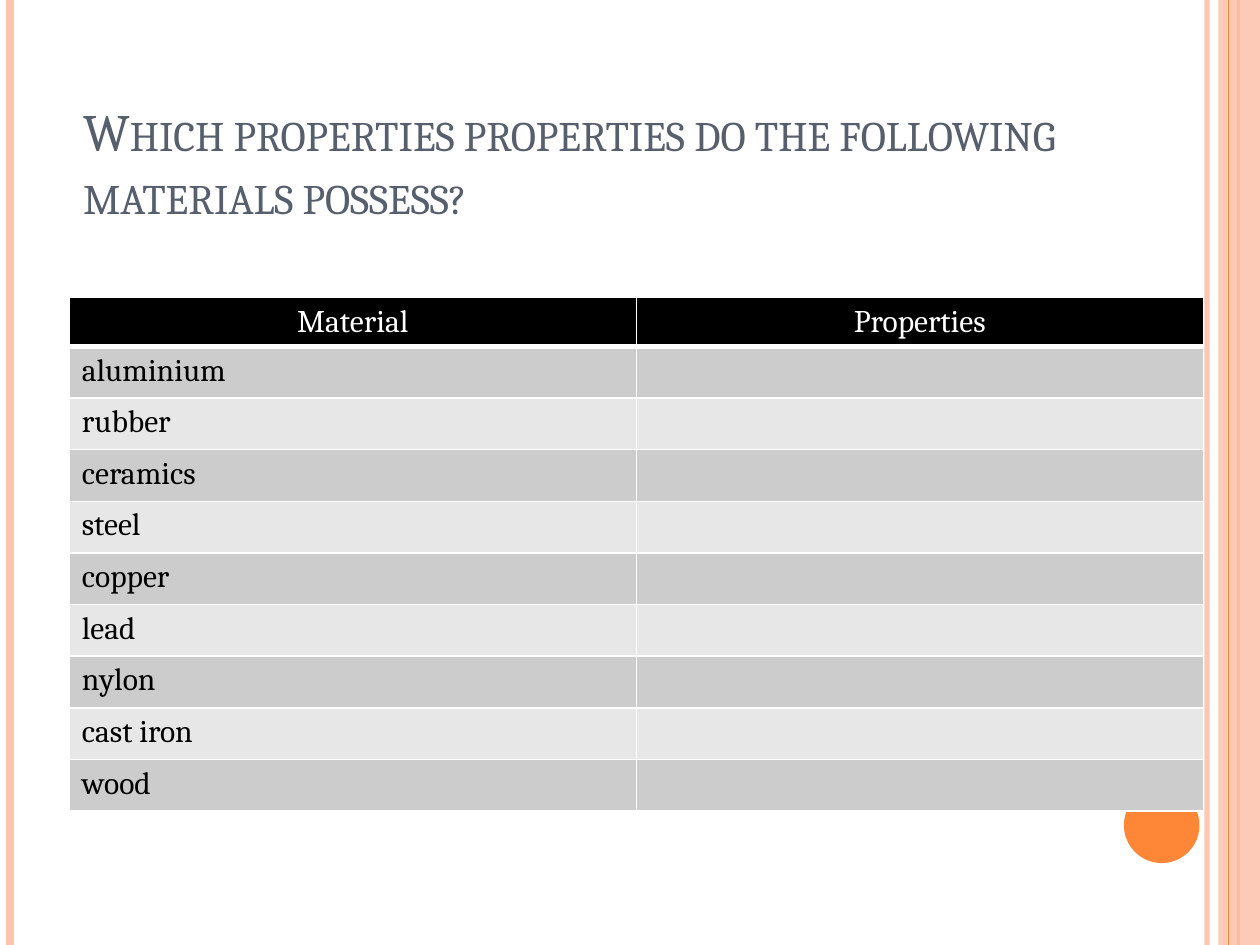
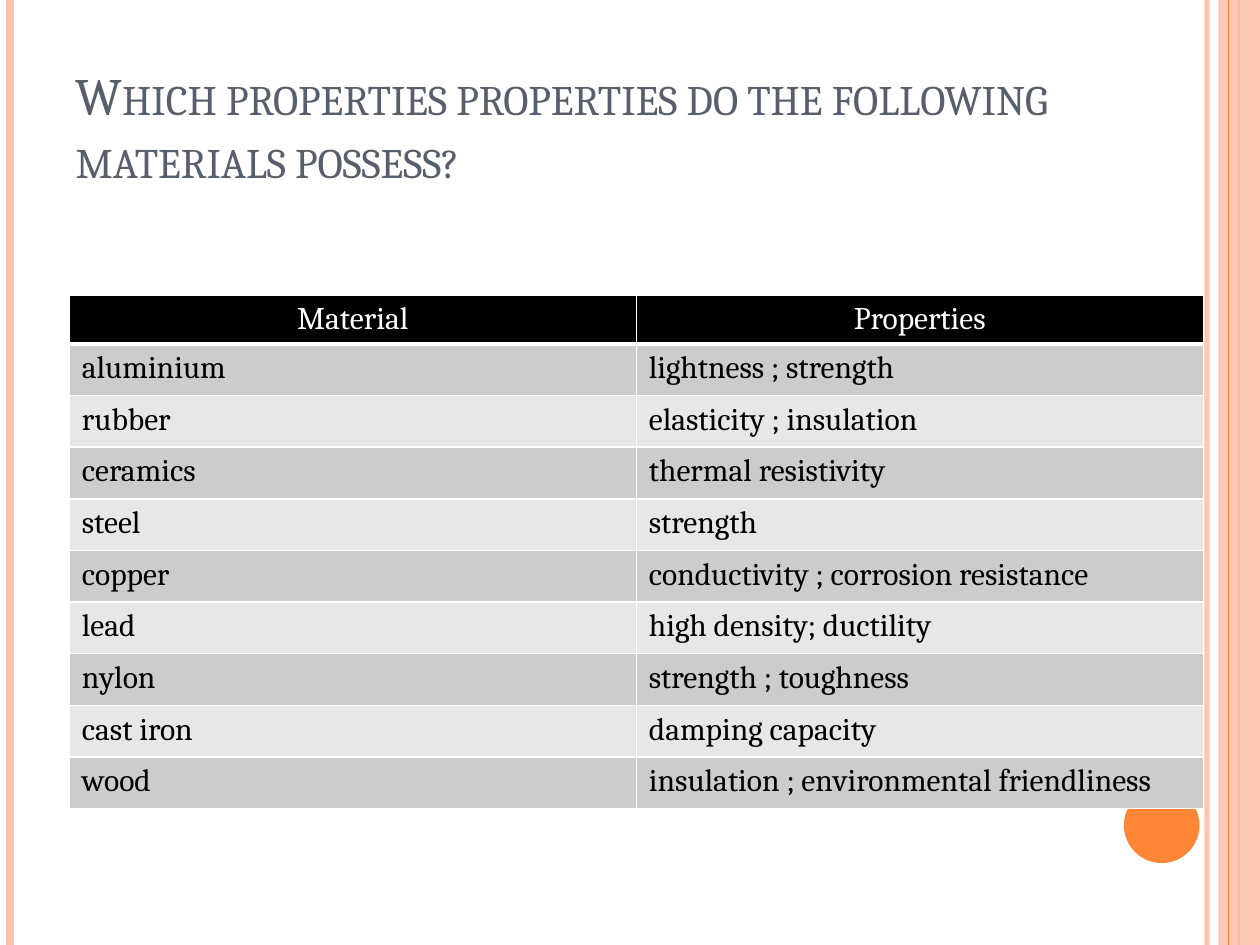
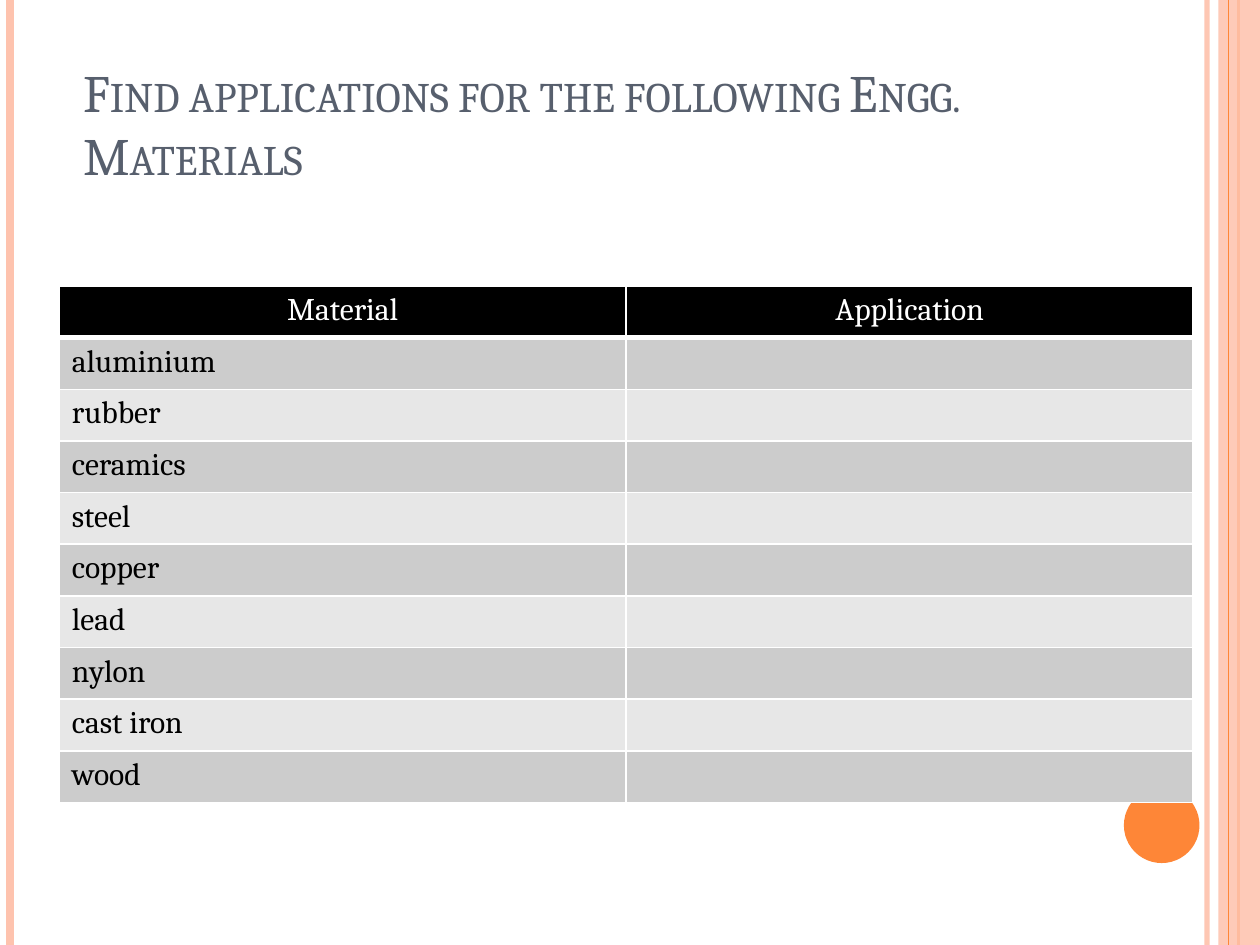
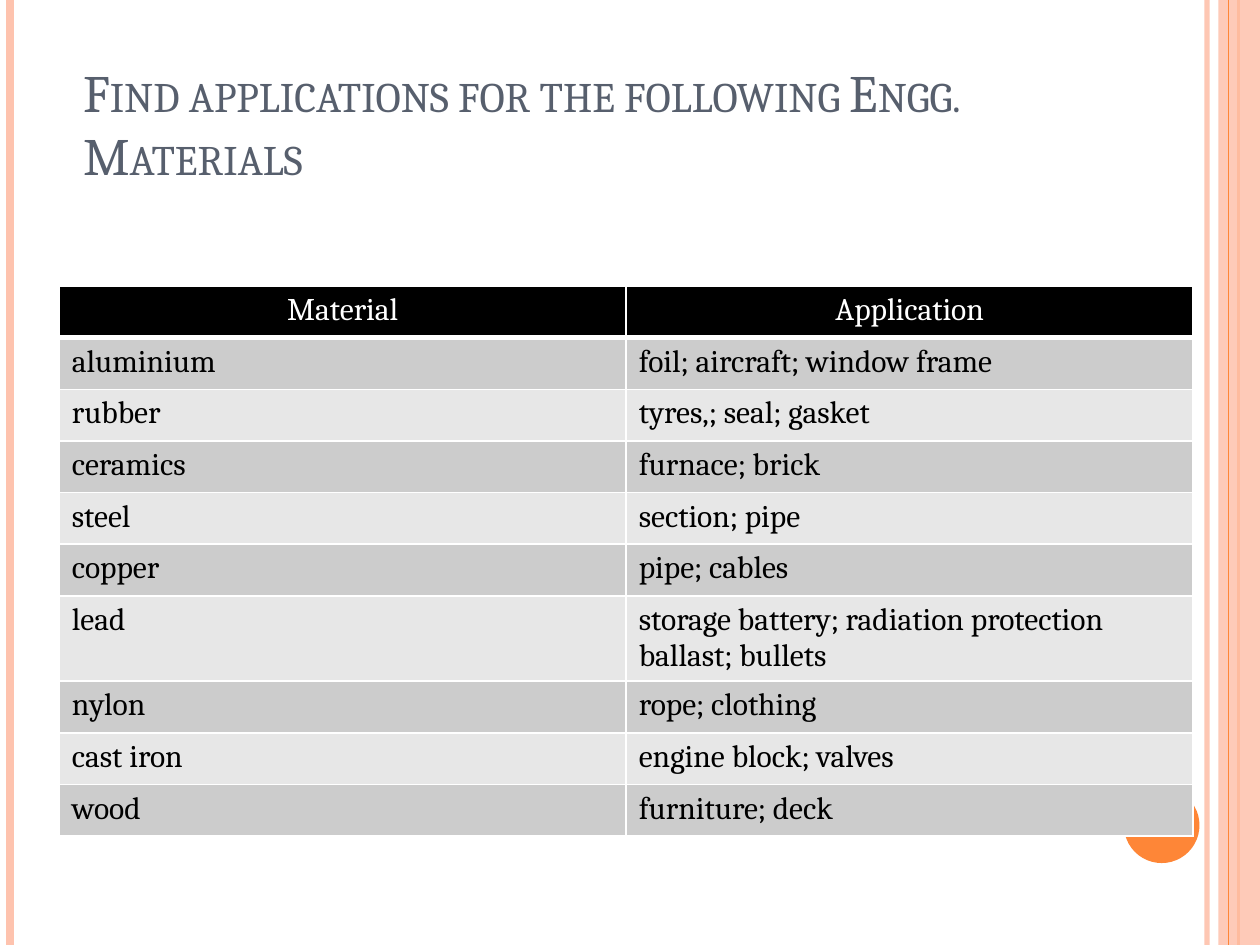
import pptx
import pptx.util
import pptx.dml.color
import pptx.enum.shapes
import pptx.enum.text
import pptx.oxml
import pptx.oxml.ns
import lxml.etree

Inches = pptx.util.Inches
Pt = pptx.util.Pt
RGBColor = pptx.dml.color.RGBColor
qn = pptx.oxml.ns.qn

PEACH = RGBColor(0xFE, 0xC3, 0xAE)
ORANGE = RGBColor(0xFE, 0x86, 0x37)
SLATE = RGBColor(0x57, 0x5F, 0x6D)
BLACK = RGBColor(0, 0, 0)
WHITE = RGBColor(0xFF, 0xFF, 0xFF)
DARK_BAND = RGBColor(0xCC, 0xCC, 0xCC)
LIGHT_BAND = RGBColor(0xE7, 0xE7, 0xE7)
FONT = "Cambria"

MATERIALS = ["aluminium", "rubber", "ceramics", "steel", "copper",
             "lead", "nylon", "cast iron", "wood"]
PROPERTIES = ["lightness ; strength", "elasticity ; insulation",
              "thermal resistivity", "strength",
              "conductivity ; corrosion resistance",
              "high density; ductility", "strength ; toughness",
              "damping capacity", "insulation ; environmental friendliness"]
APPLICATIONS = ["foil; aircraft; window frame", "tyres,; seal; gasket",
                "furnace; brick", "section; pipe", "pipe; cables",
                "storage battery; radiation protection ballast; bullets",
                "rope; clothing", "engine block; valves", "furniture; deck"]
UNANSWERED = [""] * len(MATERIALS)
PROPERTY_QUESTION = "Which properties properties do the following materials possess?"
APPLICATION_QUESTION = "Find applications for the following Engg. Materials"

PAGES = [
    (PROPERTY_QUESTION, (0.5, 0.28, 9, 1.56), 0.06, "Properties", UNANSWERED, (0.55, 2.36), 0.16),
    (PROPERTY_QUESTION, (0.5, 0.3, 8.17, 1.25), 0, "Properties", PROPERTIES, (0.55, 2.34), 0.16),
    (APPLICATION_QUESTION, (0.5, 0.28, 9, 1.25), 0.06, "Application", UNANSWERED, (0.47, 2.27), 0.41),
    (APPLICATION_QUESTION, (0.5, 0.28, 9, 1.25), 0.06, "Application", APPLICATIONS, (0.47, 2.27), 0.41),
]


def set_alpha(element, percent):
    color = next(element.iter(qn("a:srgbClr")))
    lxml.etree.SubElement(color, qn("a:alpha")).set("val", str(percent * 1000))


def style_cell(cell, text, fill, color, bottom_width):
    tc_pr = cell._tc.get_or_add_tcPr()
    for side, width in (("L", 1), ("R", 1), ("T", 1), ("B", bottom_width)):
        tc_pr.append(pptx.oxml.parse_xml(
            f'<a:ln{side} xmlns:a="http://schemas.openxmlformats.org/drawingml/2006/main" '
            f'w="{Pt(width)}"><a:solidFill><a:srgbClr val="{WHITE}"/></a:solidFill></a:ln{side}>'))
    cell.fill.solid()
    cell.fill.fore_color.rgb = fill
    cell.text_frame.text = text
    font = cell.text_frame.paragraphs[0].font
    for run in cell.text_frame.paragraphs[0].runs:
        font = run.font
    font.name = FONT
    font.size = Pt(18)
    font.bold = False
    font.color.rgb = color


deck = pptx.Presentation()
deck.slide_width = Inches(10)
deck.slide_height = Inches(7.5)
layout = deck.slide_layouts[5]
slides = [deck.slides.add_slide(layout) for page in PAGES]

decor = []
drawing = slides[0].shapes
for x, color, width, alpha in ((9.58, PEACH, 3, 93), (0.08, PEACH, 4.5, 100),
                               (9.83, ORANGE, 1.5, 100), (9.75, ORANGE, 0.75, 100)):
    stripe = drawing.add_connector(pptx.enum.shapes.MSO_CONNECTOR.STRAIGHT,
                                   Inches(x), 0, Inches(x), Inches(7.5))
    stripe.line.color.rgb = color
    stripe.line.width = Pt(width)
    if alpha < 100:
        set_alpha(stripe.element, alpha)
    lxml.etree.SubElement(stripe.element.spPr, qn("a:effectLst"))
    decor.append(stripe.element)

band = drawing.add_shape(pptx.enum.shapes.MSO_SHAPE.RECTANGLE,
                         Inches(9.67), 0, Inches(0.33), Inches(7.5))
dot = drawing.add_shape(pptx.enum.shapes.MSO_SHAPE.OVAL,
                        Inches(8.92), Inches(6.25), Inches(0.6), Inches(0.6))
for ornament, color in ((band, PEACH), (dot, ORANGE)):
    ornament.shadow.inherit = False
    ornament.fill.solid()
    ornament.fill.fore_color.rgb = color
    ornament.line.fill.background()
set_alpha(band.element, 87)
decor.insert(3, band.element)
decor.append(dot.element)
for element in decor:
    layout.shapes.element.append(element)

for slide, page in zip(slides, PAGES):
    question, title_box, indent, heading, answers, table_corner, header_height = page

    title = slide.shapes.title
    title.left, title.top, title.width, title.height = [Inches(n) for n in title_box]
    title.text_frame.text = question
    title.text_frame.word_wrap = True
    title.text_frame.auto_size = pptx.enum.text.MSO_AUTO_SIZE.NONE
    title.text_frame.vertical_anchor = pptx.enum.text.MSO_ANCHOR.BOTTOM
    line = title.text_frame.paragraphs[0]
    line.alignment = pptx.enum.text.PP_ALIGN.LEFT
    line._p.get_or_add_pPr().set("marL", str(Inches(indent)))
    font = line.runs[0].font
    font.name = FONT
    font.size = Pt(30)
    font.color.rgb = SLATE
    line.runs[0]._r.get_or_add_rPr().set("cap", "small")

    entries = list(zip(MATERIALS, answers))
    left, top = table_corner
    table = slide.shapes.add_table(
        len(entries) + 1, 2, Inches(left), Inches(top), Inches(9),
        Inches(header_height + 0.41 * len(entries))).table
    for row in table.rows:
        row.height = Inches(0.41)
    table.rows[0].height = Inches(header_height)
    for column, label in enumerate(("Material", heading)):
        header = table.cell(0, column)
        style_cell(header, label, BLACK, WHITE, 3)
        header.text_frame.paragraphs[0].alignment = pptx.enum.text.PP_ALIGN.CENTER
    for number, entry in enumerate(entries, 1):
        fill = DARK_BAND if number % 2 else LIGHT_BAND
        for column, text in enumerate(entry):
            style_cell(table.cell(number, column), text, fill, BLACK, 1)

deck.save("out.pptx")
